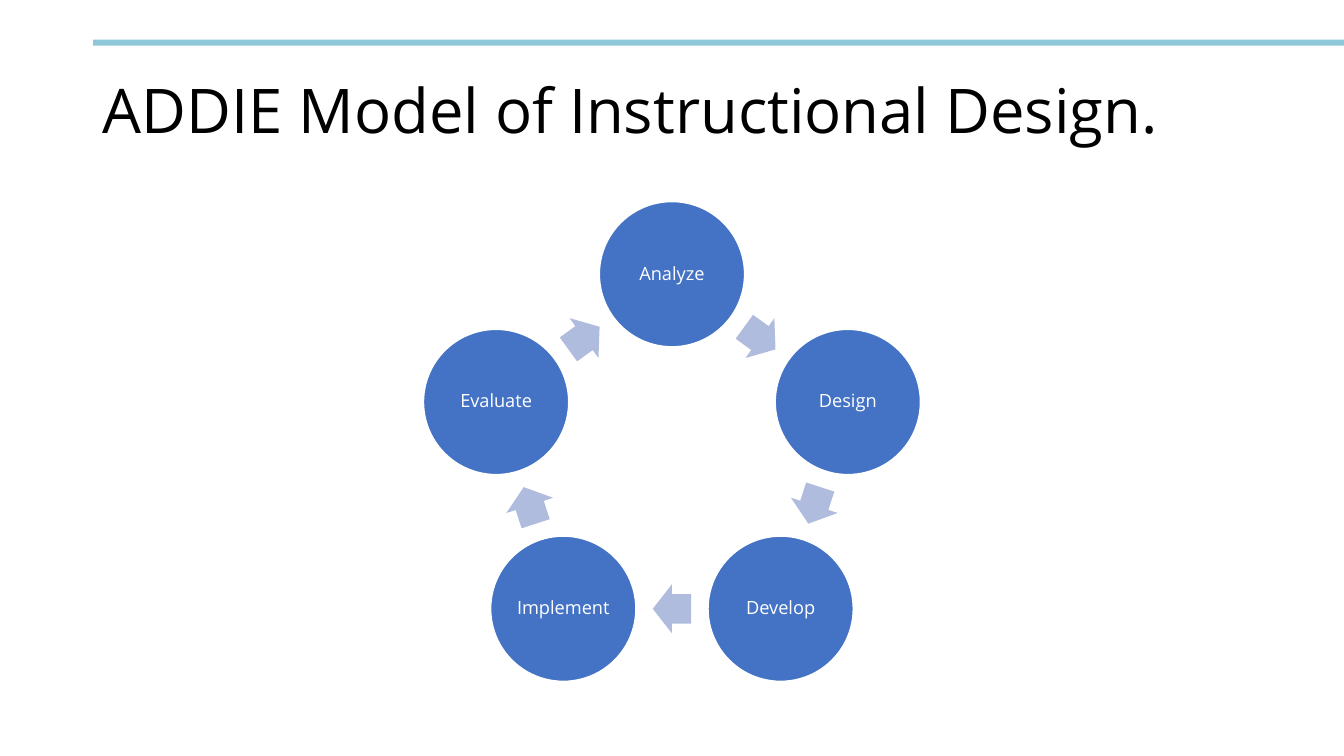
from math import cos, pi, radians, sin

from pptx import Presentation
from pptx.dml.color import RGBColor
from pptx.enum.shapes import MSO_SHAPE as SHAPE
from pptx.enum.text import MSO_ANCHOR as ANCHOR, MSO_AUTO_SIZE as AUTO_SIZE, PP_ALIGN as ALIGN
from pptx.util import Cm, Pt

COLORS = {"bar": "8EC7D7", "step": "4472C4", "arrow": "B0BCDE", "light": "FFFFFF", "dark": "000000"}
FONT = "Open Sans"
STEPS = ["Analyze", "Design", "Develop", "Implement", "Evaluate"]
SLIDE_W, SLIDE_H = 33.87, 19.05
CENTER_X, CENTER_Y, RADIUS = SLIDE_W / 2, 11.57, 4.66
DIAMETER = 3.66
ARROW_W, ARROW_H = 0.97, 1.24


def color(name):
    """Return the named palette colour."""
    return RGBColor.from_string(COLORS[name])


def apply(target, values):
    """Set every attribute of the target from a dict."""
    for name, value in values.items():
        setattr(target, name, value)


def set_text(sp, text, size, fill, frame, para):
    """Write one formatted paragraph into a shape."""
    tf = sp.text_frame
    apply(tf, {"word_wrap": True, "vertical_anchor": ANCHOR.MIDDLE, **frame})
    p = tf.paragraphs[0]
    apply(p, {"line_spacing": 0.9, **para})
    r = p.add_run()
    r.text = text
    apply(r.font, {"name": FONT, "size": Pt(size)})
    r.font.color.rgb = color(fill)


def add_title(s, text):
    """Place and fill the title placeholder."""
    sp = s.shapes.title
    apply(sp, {"left": Cm(2.33), "top": Cm(1.02), "width": Cm(29.21), "height": Cm(3.68)})
    set_text(sp, text, 44, "dark", {"auto_size": AUTO_SIZE.NONE}, {"alignment": ALIGN.LEFT})


def add_filled(shapes, kind, left, top, width, height, fill):
    """Add a flat preset shape without an outline."""
    sp = shapes.add_shape(kind, Cm(left), Cm(top), Cm(width), Cm(height))
    sp.shadow.inherit = False
    sp.fill.solid()
    sp.fill.fore_color.rgb = color(fill)
    sp.line.fill.background()
    return sp


def add_on_ring(shapes, kind, angle, radius, width, height, fill):
    """Add a shape centred on the ring at a clockwise angle from the top."""
    x = CENTER_X + radius * sin(radians(angle))
    y = CENTER_Y - radius * cos(radians(angle))
    return add_filled(shapes, kind, x - width / 2, y - height / 2, width, height, fill)


def add_step(shapes, text, angle):
    """Add one labelled circle of the cycle."""
    sp = add_on_ring(shapes, SHAPE.OVAL, angle, RADIUS, DIAMETER, DIAMETER, "step")
    sp.line.color.rgb = color("light")
    sp.line.width = Pt(1)
    margins = ("margin_left", "margin_top", "margin_right", "margin_bottom")
    set_text(sp, text, 13, "light", dict.fromkeys(margins, Cm(0.05)),
             {"alignment": ALIGN.CENTER, "space_after": Pt(4.5)})


def add_arrow(shapes, angle, radius):
    """Add one arrow pointing clockwise along the ring."""
    sp = add_on_ring(shapes, SHAPE.RIGHT_ARROW, angle, radius, ARROW_W, ARROW_H, "arrow")
    sp.adjustments[0], sp.adjustments[1] = 0.6, 0.5
    sp.rotation = angle


def add_cycle(s, steps):
    """Add a grouped ring of steps with an arrow after each."""
    shapes = s.shapes.add_group_shape().shapes
    turn = 360 / len(steps)
    for i, text in enumerate(steps):
        add_step(shapes, text, i * turn)
        add_arrow(shapes, (i + 0.5) * turn, RADIUS * cos(pi / len(steps)))


def main():
    """Build and save the slide."""
    prs = Presentation()
    apply(prs, {"slide_width": Cm(SLIDE_W), "slide_height": Cm(SLIDE_H)})
    s = prs.slides.add_slide(prs.slide_layouts[5])
    add_filled(s.shapes, SHAPE.RECTANGLE, 2.35, 1, SLIDE_W - 2.35, 0.15, "bar")
    add_title(s, "ADDIE Model of Instructional Design.")
    add_cycle(s, STEPS)
    prs.save("out.pptx")


if __name__ == "__main__":
    main()
